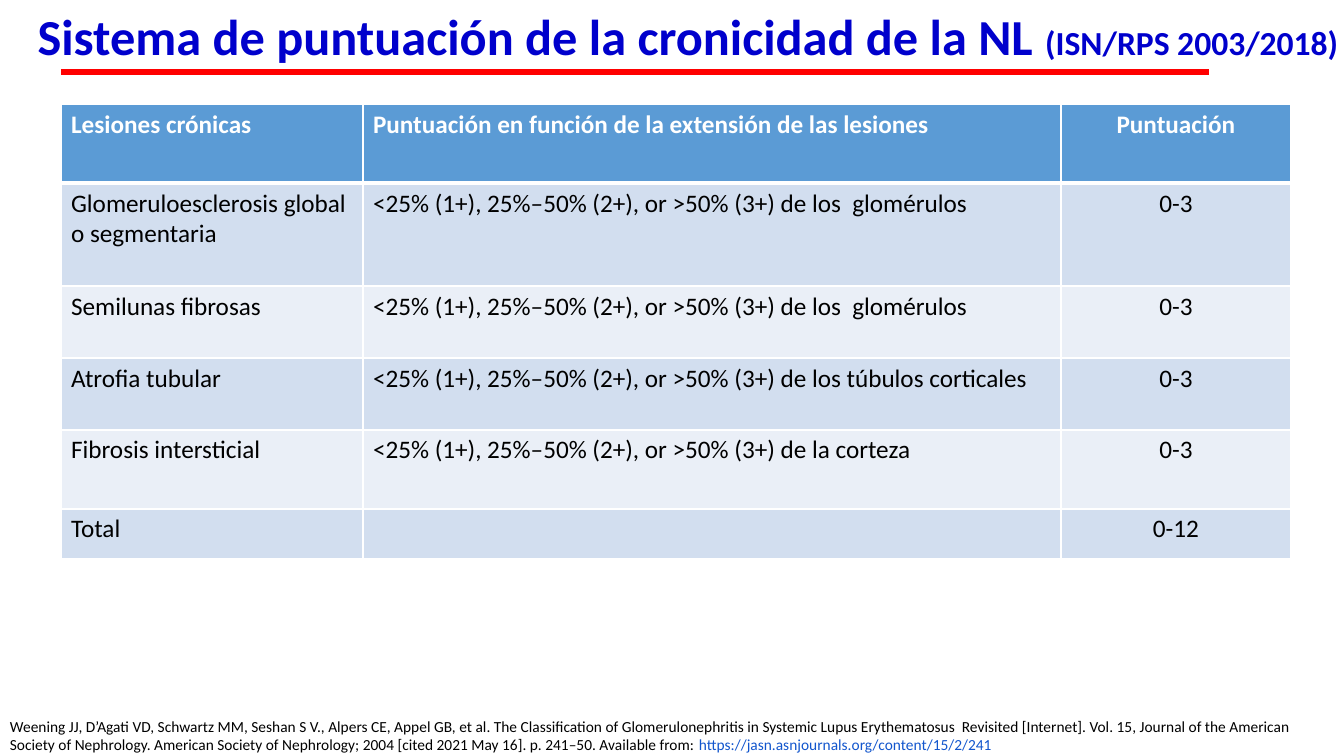
from dataclasses import dataclass

import pptx
import pptx.dml.color
import pptx.enum.shapes
import pptx.enum.text
import pptx.oxml
import pptx.oxml.ns
import pptx.util

ALIGN = pptx.enum.text.PP_ALIGN
SCALE = 914400 / 100.8


@dataclass(frozen=True)
class Theme:
    font: str = "Calibri"
    title: str = "0000CC"
    rule: str = "FF0000"
    head: str = "5B9BD5"
    bands: tuple[str, str] = ("D2DEEF", "EAEFF7")
    white: str = "FFFFFF"
    ink: str = "000000"
    link: str = "1155CD"
    big: int = 36
    mid: int = 24
    body: int = 18
    note: int = 11


@dataclass(frozen=True)
class Span:
    text: str
    size: int
    color: str
    bold: bool = False


@dataclass(frozen=True)
class Block:
    left: int
    top: int
    width: int
    height: int
    align: ALIGN
    spans: tuple[Span, ...]


@dataclass(frozen=True)
class Row:
    height: int
    cells: tuple[str, str, str]


THEME = Theme()
WIDTHS = (302, 698, 230)
RANGE = "<25% (1+), 25%–50% (2+), or >50% (3+) de "
ROWS = (
    Row(79, ("Lesiones crónicas", "Puntuación en función de la extensión de las lesiones ", "Puntuación")),
    Row(103, ("Glomeruloesclerosis global o segmentaria ", RANGE + "los  glomérulos", "0-3")),
    Row(72, ("Semilunas fibrosas", RANGE + "los  glomérulos", "0-3")),
    Row(72, ("Atrofia tubular", RANGE + "los túbulos corticales", "0-3")),
    Row(79, ("Fibrosis intersticial", RANGE + "la corteza", "0-3")),
    Row(50, ("Total", "", "0-12")),
)
TITLE = Block(-21, 0, 1418, 60, ALIGN.CENTER, (
    Span("Sistema de puntuación de la cronicidad de la NL ", THEME.big, THEME.title, True),
    Span("(ISN/RPS 2003/2018)", THEME.mid, THEME.title, True),
))
SOURCE = Block(0, 712, 1319, 47, ALIGN.LEFT, (
    Span(
        "Weening JJ, D’Agati VD, Schwartz MM, Seshan S V., Alpers CE, Appel GB, et al. "
        "The Classification of Glomerulonephritis in Systemic Lupus Erythematosus  "
        "Revisited [Internet]. Vol. 15, Journal of the American Society of Nephrology. "
        "American Society of Nephrology; 2004 [cited 2021 May 16]. p. 241–50. Available from: ",
        THEME.note, THEME.ink,
    ),
    Span("https://jasn.asnjournals.org/content/15/2/241", THEME.note, THEME.link),
))


def px(value: int) -> pptx.util.Emu:
    return pptx.util.Emu(round(value * SCALE))


def rgb(code: str) -> pptx.dml.color.RGBColor:
    return pptx.dml.color.RGBColor.from_string(code)


def style(font, size: int, color: str, bold: bool) -> None:
    font.name = THEME.font
    font.size = pptx.util.Pt(size)
    font.bold = bold
    font.color.rgb = rgb(color)


def write(slide, block: Block) -> None:
    box = slide.shapes.add_textbox(px(block.left), px(block.top), px(block.width), px(block.height))
    box.text_frame.word_wrap = True
    para = box.text_frame.paragraphs[0]
    para.alignment = block.align
    for span in block.spans:
        run = para.add_run()
        run.text = span.text
        style(run.font, span.size, span.color, span.bold)


def border(cell, side: str, points: int) -> None:
    space = pptx.oxml.ns.nsdecls("a")
    width = pptx.util.Pt(points)
    cell._tc.get_or_add_tcPr().append(pptx.oxml.parse_xml(
        f'<a:ln{side} {space} w="{width}"><a:solidFill>'
        f'<a:srgbClr val="{THEME.white}"/></a:solidFill></a:ln{side}>'
    ))


def grid(slide, left: int, top: int) -> None:
    high = sum(row.height for row in ROWS)
    frame = slide.shapes.add_table(
        len(ROWS), len(WIDTHS), px(left), px(top), px(sum(WIDTHS)), px(high)
    )
    table = frame.table
    for column, width in zip(table.columns, WIDTHS):
        column.width = px(width)
    for r, row in enumerate(ROWS):
        table.rows[r].height = px(row.height)
        head = r == 0
        for c, text in enumerate(row.cells):
            cell = table.cell(r, c)
            for side in "LRTB":
                thick = (r, side) in ((0, "B"), (1, "T"))
                border(cell, side, 3 if thick else 1)
            cell.fill.solid()
            cell.fill.fore_color.rgb = rgb(THEME.head if head else THEME.bands[(r - 1) % 2])
            cell.text_frame.text = text
            para = cell.text_frame.paragraphs[0]
            para.alignment = ALIGN.CENTER if c == 2 else ALIGN.LEFT
            for run in para.runs:
                style(run.font, THEME.body, THEME.white if head else THEME.ink, head)


def rule(slide, left: int, right: int, y: int) -> None:
    line = slide.shapes.add_connector(
        pptx.enum.shapes.MSO_CONNECTOR.STRAIGHT, px(left), px(y), px(right), px(y)
    )
    line.line.color.rgb = rgb(THEME.rule)
    line.line.width = pptx.util.Pt(4.5)
    line._element.spPr.append(pptx.oxml.parse_xml(f'<a:effectLst {pptx.oxml.ns.nsdecls("a")}/>'))


def main() -> None:
    deck = pptx.Presentation()
    deck.slide_width, deck.slide_height = px(1344), px(756)
    slide = deck.slides.add_slide(deck.slide_layouts[6])
    grid(slide, 61, 104)
    write(slide, SOURCE)
    rule(slide, 61, 1209, 72)
    write(slide, TITLE)
    deck.save("out.pptx")


if __name__ == "__main__":
    main()
